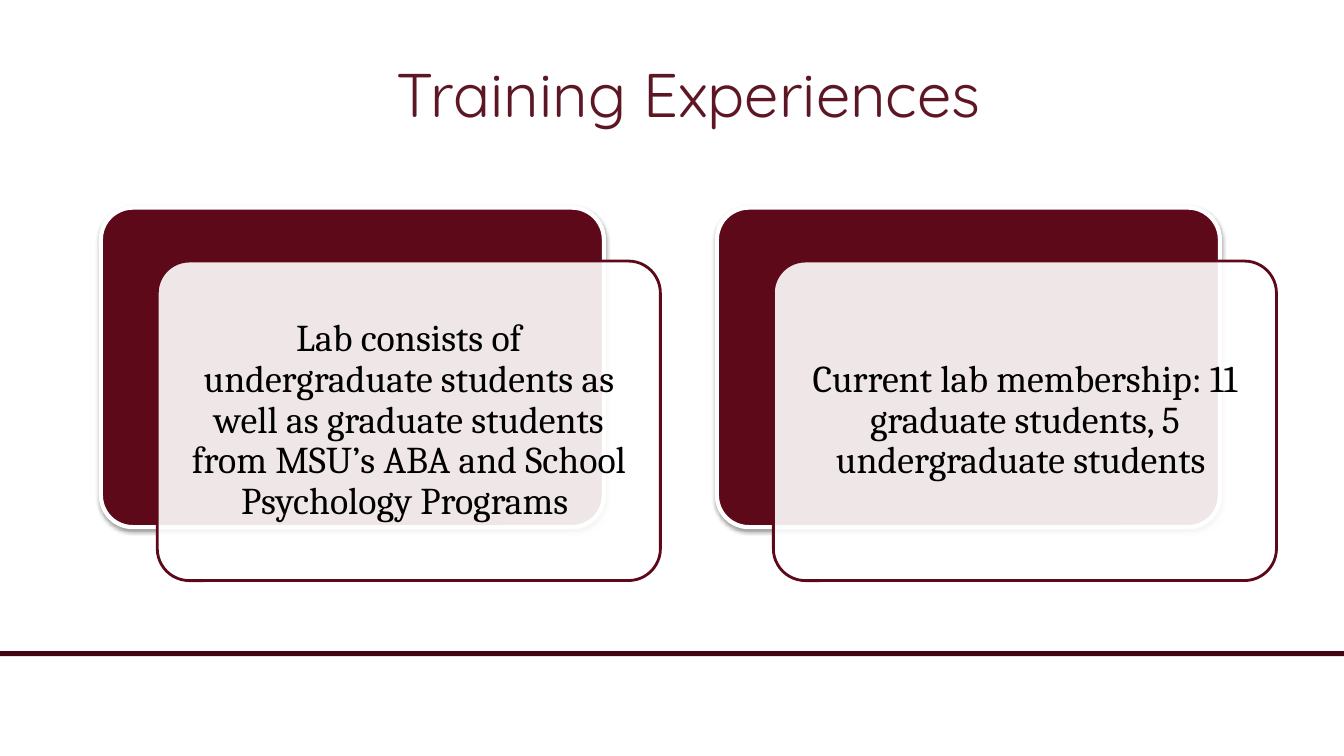
from pptx import Presentation
from pptx.dml.color import RGBColor as RGB
from pptx.enum.shapes import MSO_SHAPE as Kind
from pptx.enum.text import MSO_ANCHOR as Anchor, PP_ALIGN as Align
from pptx.oxml import parse_xml
from pptx.oxml.ns import nsdecls, qn
from pptx.util import Inches, Pt

COLORS = {
    "title": "5D1724",
    "card": "5E091A",
    "rule": "410611",
    "white": "FFFFFF",
    "black": "000000",
}
NOTES = [
    "Lab consists of undergraduate students as well as graduate students "
    "from MSU’s ABA and School Psychology Programs ",
    "Current lab membership: 11 graduate students, 5 undergraduate students ",
]


def tint(name):
    return RGB.from_string(COLORS[name])


def write(frame, text, font="Cambria", size=27, color="black", space=1.0, inset=0.1):
    frame.word_wrap = True
    frame.vertical_anchor = Anchor.MIDDLE
    frame.margin_left = frame.margin_right = Inches(inset)
    frame.margin_top = frame.margin_bottom = Inches(inset)
    para = frame.paragraphs[0]
    para.alignment = Align.CENTER
    para.line_spacing = space
    run = para.add_run()
    run.text = text
    run.font.name = font
    run.font.size = Pt(size)
    run.font.color.rgb = tint(color)


class Deck:
    def __init__(self):
        self.prs = Presentation()
        self.prs.slide_width = Inches(13.33)
        self.prs.slide_height = Inches(7.5)
        self.slide = self.prs.slides.add_slide(self.prs.slide_layouts[6])

    def shape(self, kind, box, fill, line=None, width=0):
        item = self.slide.shapes.add_shape(kind, *map(Inches, box))
        item.shadow.inherit = False
        item.fill.solid()
        item.fill.fore_color.rgb = tint(fill)
        if line:
            item.line.color.rgb = tint(line)
            item.line.width = Pt(width)
        else:
            item.line.fill.background()
        return item

    def panel(self, box, fill, line, width):
        item = self.shape(Kind.ROUNDED_RECTANGLE, box, fill, line, width)
        item.adjustments[0] = 0.1
        return item

    def text(self, box, text, **style):
        item = self.slide.shapes.add_textbox(*map(Inches, box))
        write(item.text_frame, text, **style)

    def shade(self, item):
        item._element.spPr.find(qn("a:effectLst")).append(parse_xml(
            f'<a:outerShdw {nsdecls("a")} blurRad="{Pt(3.1)}" dist="{Pt(1.6)}" '
            f'dir="5400000" rotWithShape="0"><a:srgbClr val="{COLORS["black"]}">'
            '<a:alpha val="38000"/></a:srgbClr></a:outerShdw>'))

    def fade(self, item, share):
        color = item._element.spPr.find(qn("a:solidFill"))[0]
        color.append(parse_xml(f'<a:alpha {nsdecls("a")} val="{share * 1000}"/>'))

    def card(self, left, top, note):
        wide, high = 4.99, 3.17
        self.shade(self.panel((left, top, wide, high), "card", "white", 3))
        # Front panel, shifted down and right
        left, top = left + 0.56, top + 0.53
        self.fade(self.panel((left, top, wide, high), "white", "card", 2), 90)
        pad = 0.09
        self.text((left + pad, top + pad, wide - 2 * pad, high - 2 * pad),
                  note, space=0.9, inset=0.15)


def main():
    deck = Deck()

    # Footer rule
    deck.shape(Kind.RECTANGLE, (0, 6.46, 13.33, 0.05), "rule")

    # Title
    deck.text((1, 0.3, 11.67, 1.25), "Training Experiences",
              font="Quicksand", size=44, color="title")

    # Cards
    for i, note in enumerate(NOTES):
        deck.card(1 + i * 6.11, 2.06, note)

    deck.prs.save("out.pptx")


if __name__ == "__main__":
    main()
